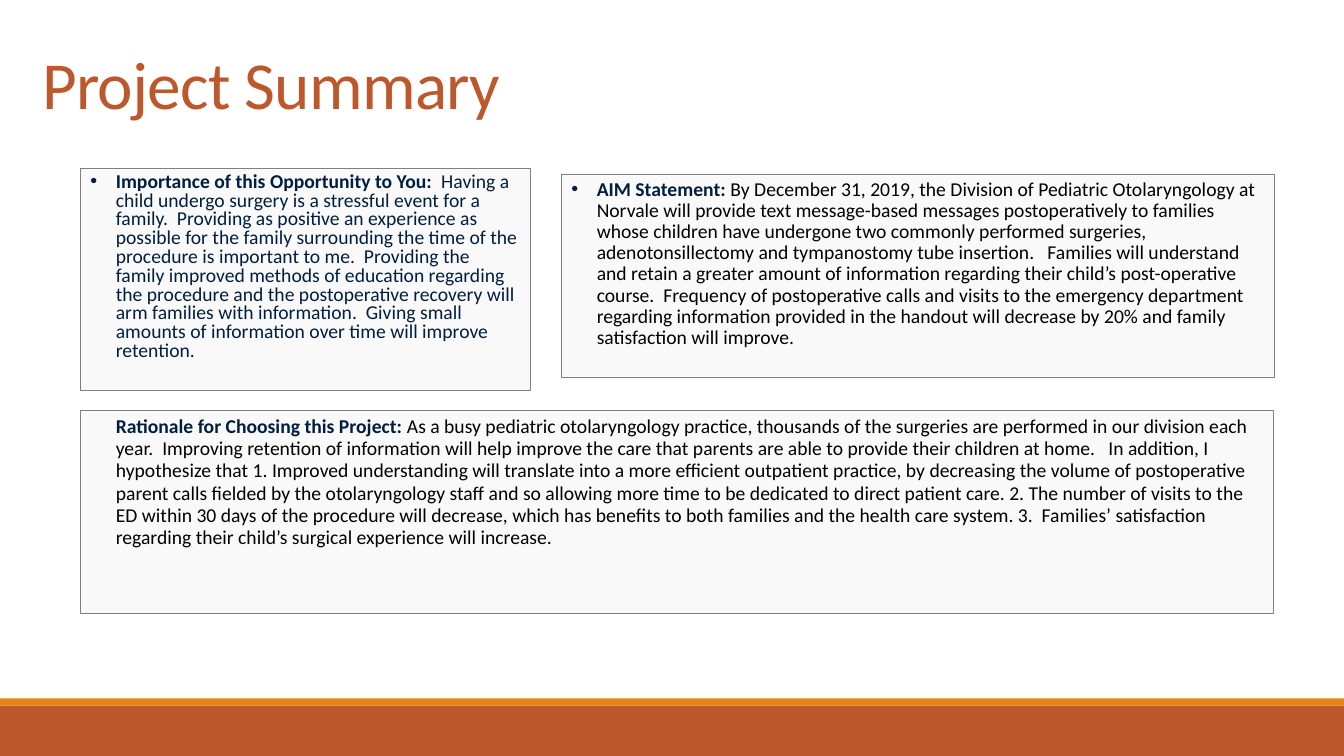
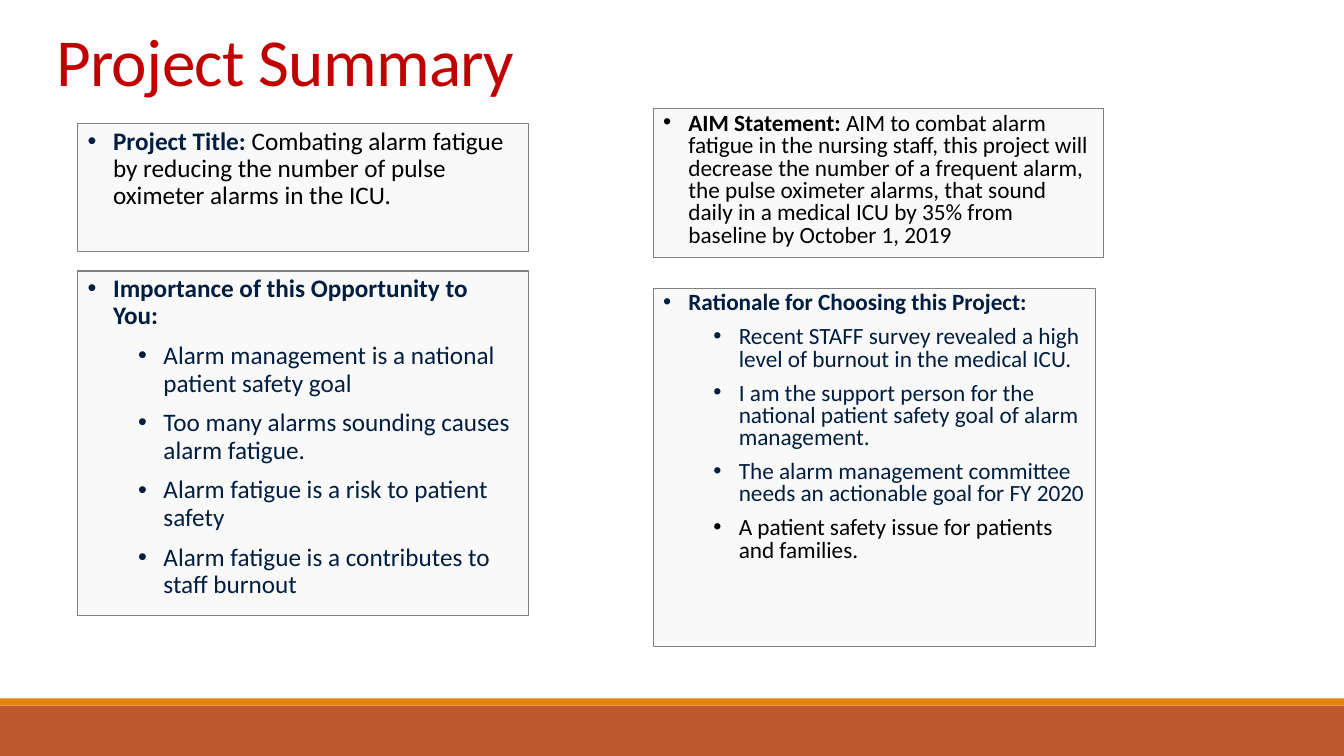
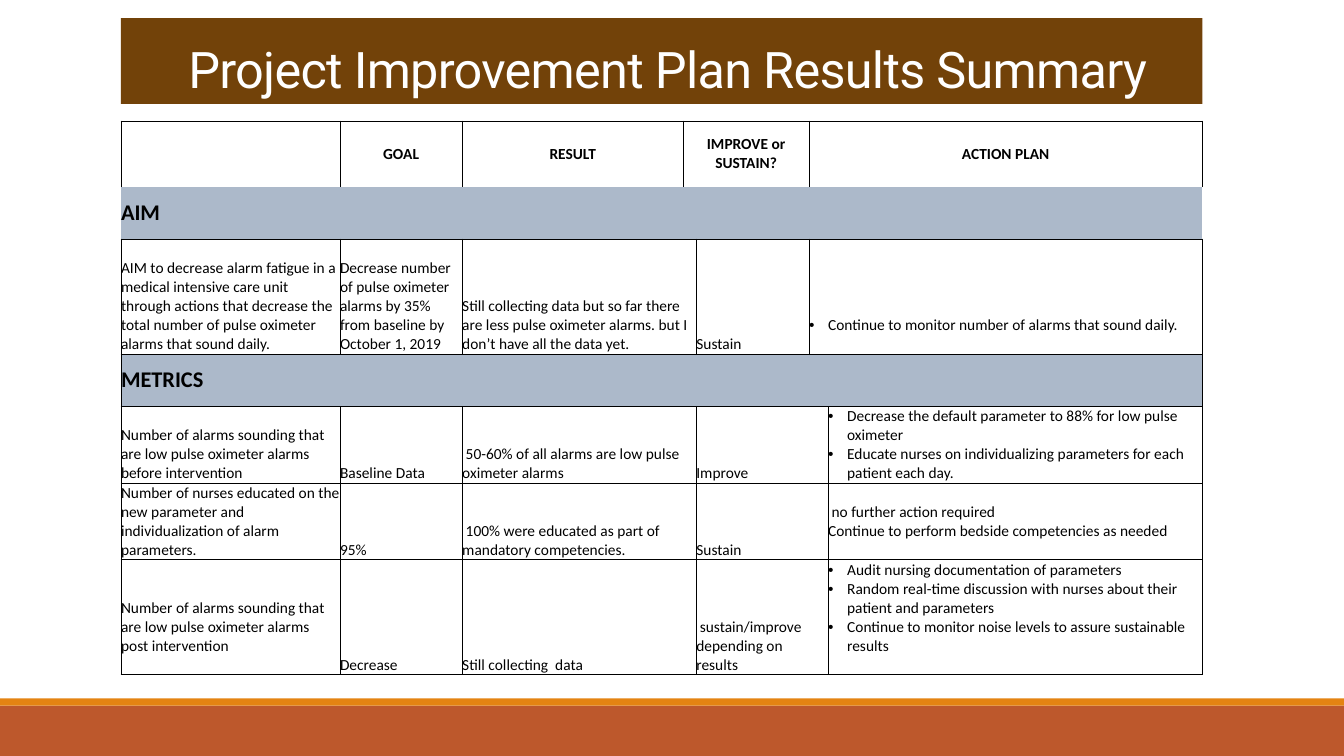
from lxml.etree import SubElement
from pptx import Presentation
from pptx.dml.color import RGBColor
from pptx.enum.shapes import MSO_SHAPE
from pptx.enum.text import MSO_ANCHOR as Anchor, PP_ALIGN as Align
from pptx.oxml.ns import qn
from pptx.util import Cm, Pt

NAVY, BLACK, WHITE = "011E40", "000000", "FFFFFF"
RUST, ORANGE, RED, BROWN = "BD582C", "E48312", "C00000", "724209"
PANEL, PANEL_EDGE, SECTION = "F2F2F2", "808080", "ACB9CA"
BODY_FONT = "Calibri"
PANEL_OPACITY = 46
SLIDE_WIDTH, SLIDE_HEIGHT = 33.87, 19.05
FOOTER_BANDS = [(17.78, 1.27, RUST), (17.6, 0.18, ORANGE)]
HANG, SUB_INDENT, CELL_HANG = 0.64, 1.91, 0.48
TEXT_LINE = 0.48

# Each panel: place (cm), size (pt), line spacing, and paragraphs.
# Each paragraph: level, then runs of (text, colour, bold).
SUMMARIES = [
    {
        "title": ("Project Summary", (0.81, 1.12, 27.84, 2.11), RUST),
        "panels": [
            {"at": (2.03, 10.34, 30.07, 5.13), "size": 14, "spacing": 0.95, "bullets": False,
             "text": [(0, [
                 ("Rationale for Choosing this Project: ", NAVY, True),
                 ("As a busy pediatric otolaryngology practice, thousands of the surgeries are "
                  "performed in our division each year.  Improving retention of information will "
                  "help improve the care that parents are able to provide their children at home.   "
                  "In addition, I hypothesize that 1. Improved understanding will translate into a "
                  "more efficient outpatient practice, by decreasing the volume of postoperative "
                  "parent calls fielded by the otolaryngology staff and so allowing more time to be "
                  "dedicated to direct patient care. 2. The number of visits to the ED within 30 "
                  "days of the procedure will decrease, which has benefits to both families and the "
                  "health care system. 3.  Families’ satisfaction regarding their child’s surgical "
                  "experience will increase.", BLACK, False)])]},
            {"at": (2.03, 4.24, 11.35, 5.59), "size": 14, "spacing": 0.8, "bullets": True,
             "text": [(0, [
                 ("Importance of this Opportunity to You:  ", NAVY, True),
                 ("Having a child undergo surgery is a stressful event for a family.  Providing as "
                  "positive an experience as possible for the family surrounding the time of the "
                  "procedure is important to me.  Providing the family improved methods of "
                  "education regarding the procedure and the postoperative recovery will arm "
                  "families with information.  Giving small amounts of information over time will "
                  "improve retention.", NAVY, False)])]},
            {"at": (14.15, 4.39, 17.96, 5.13), "size": 14, "spacing": 0.9, "bullets": True,
             "text": [(0, [
                 ("AIM Statement: ", NAVY, True),
                 ("By December 31, 2019, the Division of Pediatric Otolaryngology at Norvale will "
                  "provide text message-based messages postoperatively to families whose children "
                  "have undergone two commonly performed surgeries, adenotonsillectomy and "
                  "tympanostomy tube insertion.   Families will understand and retain a greater "
                  "amount of information regarding their child’s post-operative course.  Frequency "
                  "of postoperative calls and visits to the emergency department regarding "
                  "information provided in the handout will decrease by 20% and family "
                  "satisfaction will improve.", BLACK, False)])]},
        ],
    },
    {
        "title": ("Project Summary", (1.17, 0.51, 23.11, 2.13), RED),
        "panels": [
            {"at": (1.96, 3.12, 11.35, 3.23), "size": 18, "spacing": 0.9, "bullets": True,
             "text": [(0, [
                 ("Project Title: ", NAVY, True),
                 ("Combating alarm fatigue by reducing the number of pulse oximeter alarms in the "
                  "ICU.", BLACK, False)])]},
            {"at": (16.46, 7.26, 11.15, 9.04), "size": 16.6, "spacing": 0.8, "bullets": True,
             "text": [
                 (0, [("Rationale for Choosing this Project:", NAVY, True)]),
                 (1, [("Recent STAFF survey revealed a high level of burnout in the medical ICU.",
                       NAVY, False)]),
                 (1, [("I am the support person for the national patient safety goal of alarm "
                       "management.", NAVY, False)]),
                 (1, [("The alarm management committee needs an actionable goal for FY 2020",
                       NAVY, False)]),
                 (1, [("A patient safety issue for patients and families.", BLACK, False)])]},
            {"at": (1.96, 6.83, 11.35, 8.69), "size": 18, "spacing": 0.9, "bullets": True,
             "text": [
                 (0, [("Importance of this Opportunity to You:", NAVY, True)]),
                 (1, [("Alarm management is a national patient safety goal", NAVY, False)]),
                 (1, [("Too many alarms sounding causes alarm fatigue.", NAVY, False)]),
                 (1, [("Alarm fatigue is a risk to patient safety", NAVY, False)]),
                 (1, [("Alarm fatigue is a contributes to staff burnout", NAVY, False)])]},
            {"at": (16.46, 2.74, 11.35, 3.76), "size": 16.6, "spacing": 0.8, "bullets": True,
             "text": [(0, [
                 ("AIM Statement: ", BLACK, True),
                 ("AIM to combat alarm fatigue in the nursing staff, this project will decrease "
                  "the number of a frequent alarm, the pulse oximeter alarms, that sound daily in "
                  "a medical ICU by 35% from baseline by October 1, 2019", BLACK, False)])]},
        ],
    },
]

RESULTS_TITLE = (" Project Improvement Plan Results Summary", (3.05, 0.46, 27.25, 2.16), WHITE)
TABLE_PLACE = (3.05, 3.05)
COLUMN_WIDTHS = [5.52, 3.08, 5.57, 0.33, 2.84, 0.48, 9.43]
HEADER_SPANS, AIM_SPANS = [1, 1, 1, 2, 2], [1, 1, 2, 1, 2]
METRIC_SPANS, SECTION_SPANS = [1, 1, 2, 2, 1], [7]

# Each row: kind, height (cm), column spans, border sides, cells.
# A list is a bulleted cell, a tuple holds plain paragraphs.
ROWS = [
    ("header", 1.65, HEADER_SPANS, "LRT",
     ["", "GOAL", "RESULT", "IMPROVE or SUSTAIN?", "ACTION PLAN"]),
    ("section", 1.32, SECTION_SPANS, "B", ["AIM"]),
    ("body", 2.9, AIM_SPANS, "LRTB", [
        "AIM to decrease alarm fatigue in a medical intensive care unit through actions that "
        "decrease the total number of pulse oximeter alarms that sound daily.",
        "Decrease number of pulse oximeter alarms by 35% from baseline by October 1, 2019",
        "Still collecting data but so far there are less pulse oximeter alarms. but I don’t have "
        "all the data yet.",
        "Sustain",
        ["Continue to monitor number of alarms that sound daily."]]),
    ("section", 1.32, SECTION_SPANS, "LRTB", ["METRICS"]),
    ("body", 1.93, METRIC_SPANS, "LRTB", [
        "Number of alarms sounding that are low pulse oximeter alarms before intervention",
        "Baseline Data",
        " 50-60% of all alarms are low pulse oximeter alarms",
        "Improve",
        ["Decrease the default parameter to 88% for low pulse oximeter",
         "Educate nurses on individualizing parameters for each patient each day."]]),
    ("body", 1.93, METRIC_SPANS, "LRTB", [
        "Number of nurses educated on the new parameter and individualization of alarm parameters.",
        "95%",
        " 100% were educated as part of mandatory competencies.",
        "Sustain",
        (" no further action required", "Continue to perform bedside competencies as needed")]),
    ("body", 2.9, METRIC_SPANS, "LRTB", [
        "Number of alarms sounding that are low pulse oximeter alarms post intervention",
        "Decrease",
        "Still collecting  data",
        " sustain/improve depending on results",
        ["Audit nursing documentation of parameters",
         "Random real-time discussion with nurses about their patient and parameters",
         "Continue to monitor noise levels to assure sustainable results"]]),
]
# (row, first column) of cells whose text stands one line above the bottom.
RAISED_CELLS = {(2, 5), (5, 6), (6, 0), (6, 6)}
# Per row kind: text size, bold, alignment, anchor.
ROW_STYLES = {
    "header": (11, True, Align.CENTER, Anchor.MIDDLE),
    "section": (16, True, Align.LEFT, Anchor.MIDDLE),
    "body": (11, False, Align.LEFT, Anchor.BOTTOM),
}


def rgb(code):
    return RGBColor.from_string(code)


def add_box(slide, at, fill=None):
    """Add a plain rectangle without line or shadow; at is in cm."""
    box = slide.shapes.add_shape(MSO_SHAPE.RECTANGLE, *map(Cm, at))
    box.shadow.inherit = False
    box.line.fill.background()
    if fill:
        box.fill.solid()
        box.fill.fore_color.rgb = rgb(fill)
    else:
        box.fill.background()
    box.text_frame.word_wrap = True
    return box


def new_slide(deck):
    slide = deck.slides.add_slide(deck.slide_layouts[6])
    for top, height, colour in FOOTER_BANDS:
        add_box(slide, (0, top, SLIDE_WIDTH, height), colour)
    return slide


def paragraphs(frame, count):
    return [frame.paragraphs[0]] + [frame.add_paragraph() for _ in range(count - 1)]


def indent(para, left, hang, bullet):
    props = para._p.get_or_add_pPr()
    props.set("marL", str(Cm(left)))
    props.set("indent", str(-Cm(hang)))
    if bullet:
        SubElement(props, qn("a:buFont"), typeface="Arial")
        SubElement(props, qn("a:buChar"), char="•")


def set_font(para, size, name=BODY_FONT):
    para.font.name = name
    para.font.size = Pt(size)


def add_span(para, text, colour, bold=False):
    span = para.add_run()
    span.text = text
    span.font.bold = bold
    span.font.color.rgb = rgb(colour)
    return span


def add_title(slide, title, size=48, font=BODY_FONT, fill=None, align=Align.LEFT):
    text, at, colour = title
    frame = add_box(slide, at, fill).text_frame
    frame.vertical_anchor = Anchor.BOTTOM
    para = frame.paragraphs[0]
    para.alignment = align
    para.line_spacing = 0.85
    set_font(para, size, font)
    span = add_span(para, text, colour)
    span.font._element.set("spc", "-50")


def add_panel(slide, panel):
    box = add_box(slide, panel["at"], PANEL)
    colour = box.fill._xPr.find(qn("a:solidFill"))[0]
    SubElement(colour, qn("a:alpha"), val=str(PANEL_OPACITY * 1000))
    box.line.color.rgb = rgb(PANEL_EDGE)
    box.line.width = Pt(0.75)
    frame = box.text_frame
    frame.vertical_anchor = Anchor.TOP
    size, bullets = panel["size"], panel["bullets"]
    for para, (level, spans) in zip(paragraphs(frame, len(panel["text"])), panel["text"]):
        para.level = level
        para.alignment = Align.LEFT
        para.line_spacing = panel["spacing"]
        para.space_before = Pt(size / 2)
        indent(para, SUB_INDENT if level else HANG, HANG if bullets else 0, bullets)
        set_font(para, size)
        for span in spans:
            add_span(para, *span)


def set_borders(cell, sides):
    props = cell._tc.get_or_add_tcPr()
    for place, side in enumerate("LRTB"):
        line = SubElement(props, qn(f"a:ln{side}"), w=str(Pt(0.5)))
        props.insert(place, line)
        if side in sides:
            SubElement(SubElement(line, qn("a:solidFill")), qn("a:srgbClr"), val=BLACK)
        else:
            SubElement(line, qn("a:noFill"))


def fill_cell(cell, content, kind, raised):
    size, bold, align, anchor = ROW_STYLES[kind]
    cell.vertical_anchor = anchor
    if raised:
        cell.margin_bottom = Cm(TEXT_LINE)
    texts = [content] if isinstance(content, str) else content
    for para, text in zip(paragraphs(cell.text_frame, len(texts)), texts):
        para.alignment = align
        if isinstance(content, list):
            indent(para, CELL_HANG, CELL_HANG, True)
        set_font(para, size)
        if text:
            add_span(para, text, BLACK, bold)


def add_results_table(slide):
    heights = [row[1] for row in ROWS]
    size = (sum(COLUMN_WIDTHS), sum(heights))
    table = slide.shapes.add_table(len(ROWS), len(COLUMN_WIDTHS),
                                   *map(Cm, TABLE_PLACE + size)).table
    table.first_row = table.horz_banding = False
    for column, width in zip(table.columns, COLUMN_WIDTHS):
        column.width = Cm(width)
    for row_index, (kind, height, spans, sides, contents) in enumerate(ROWS):
        row = table.rows[row_index]
        row.height = Cm(height)
        for cell in row.cells:
            cell.margin_left = cell.margin_right = cell.margin_top = cell.margin_bottom = 0
            if kind == "section":
                cell.fill.solid()
                cell.fill.fore_color.rgb = rgb(SECTION)
            else:
                cell.fill.background()
            set_borders(cell, sides)
        first = 0
        for span, content in zip(spans, contents):
            cell = table.cell(row_index, first)
            if span > 1:
                cell.merge(table.cell(row_index, first + span - 1))
            fill_cell(cell, content, kind, (row_index, first) in RAISED_CELLS)
            first += span


def main():
    deck = Presentation()
    deck.slide_width, deck.slide_height = Cm(SLIDE_WIDTH), Cm(SLIDE_HEIGHT)
    for summary in SUMMARIES:
        slide = new_slide(deck)
        add_title(slide, summary["title"])
        for panel in summary["panels"]:
            add_panel(slide, panel)
    slide = new_slide(deck)
    add_title(slide, RESULTS_TITLE, 36, "Roboto", BROWN, Align.CENTER)
    add_results_table(slide)
    deck.save("out.pptx")


if __name__ == "__main__":
    main()
